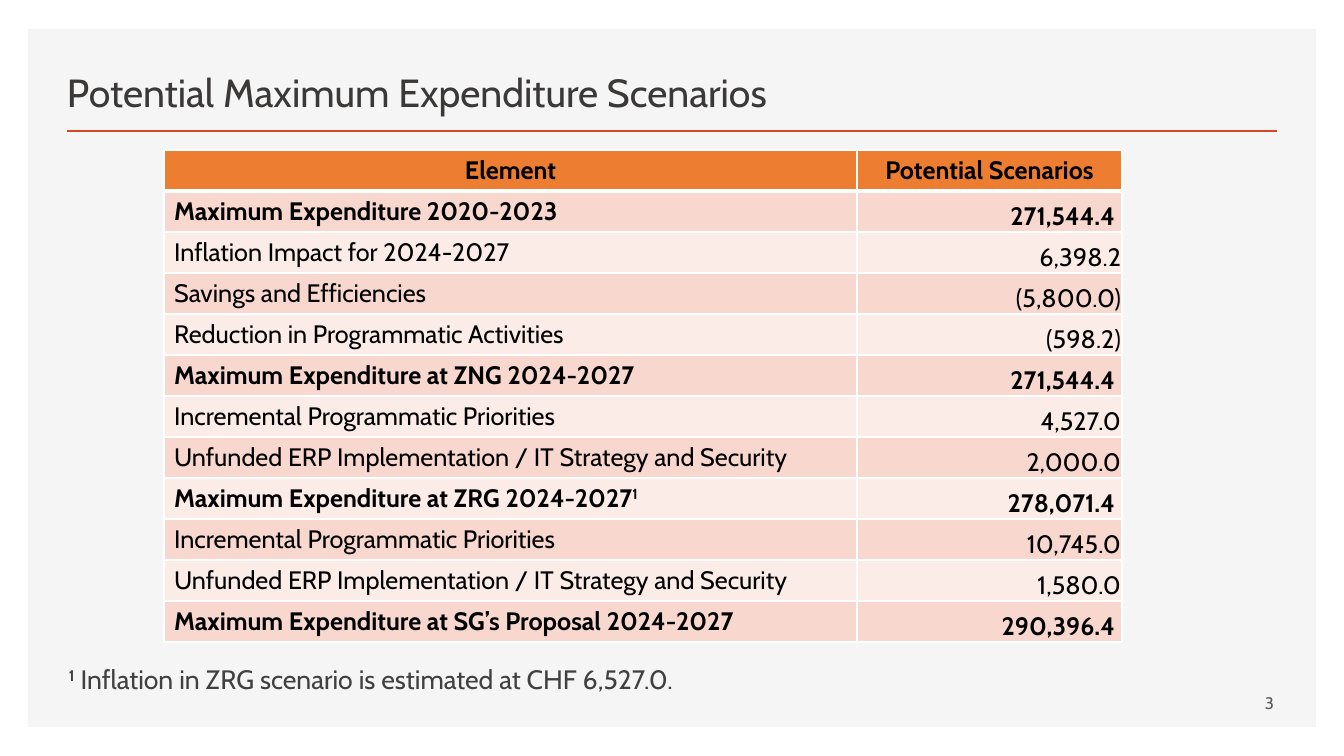
from lxml import etree
from pptx import Presentation
from pptx.dml.color import RGBColor
from pptx.enum.shapes import MSO_CONNECTOR, MSO_SHAPE
from pptx.enum.text import MSO_ANCHOR, PP_ALIGN
from pptx.oxml import parse_xml
from pptx.oxml.ns import nsdecls, qn
from pptx.util import Pt

EMU_PER_PX = 914400 / 100.8
FONT = "Cabin"
LEFT, CENTER, RIGHT = PP_ALIGN.LEFT, PP_ALIGN.CENTER, PP_ALIGN.RIGHT
TOP, MIDDLE, BOTTOM = MSO_ANCHOR.TOP, MSO_ANCHOR.MIDDLE, MSO_ANCHOR.BOTTOM

HEADINGS = ("Element", "Potential Scenarios")
# element, amount, is a total, footnote mark
SCENARIOS = [
    ("Maximum Expenditure 2020-2023", "271,544.4", True, ""),
    ("Inflation Impact for 2024-2027", "6,398.2", False, ""),
    ("Savings and Efficiencies", "(5,800.0)", False, ""),
    ("Reduction in Programmatic Activities", "(598.2)", False, ""),
    ("Maximum Expenditure at ZNG 2024-2027", "271,544.4", True, ""),
    ("Incremental Programmatic Priorities", "4,527.0", False, ""),
    ("Unfunded ERP Implementation / IT Strategy and Security", "2,000.0", False, ""),
    ("Maximum Expenditure at ZRG 2024-2027", "278,071.4", True, "1"),
    ("Incremental Programmatic Priorities", "10,745.0", False, ""),
    ("Unfunded ERP Implementation / IT Strategy and Security", "1,580.0", False, ""),
    ("Maximum Expenditure at SG’s Proposal 2024-2027", "290,396.4", True, ""),
]


def px(length):
    return round(length * EMU_PER_PX)


def rgb(color):
    return RGBColor.from_string(color)


def style(paragraph, size, color, bold=False, align=LEFT):
    paragraph.alignment = align
    font = paragraph.font
    font.name, font.size, font.bold = FONT, Pt(size), bold
    font.color.rgb = rgb(color)


def add_superscript(paragraph, mark):
    run = paragraph.add_run()
    run.text = mark
    run.font.bold = True
    run._r.get_or_add_rPr().set("baseline", "30000")


def add_text(slide, box, text, size, color, anchor=TOP, align=LEFT, mark=""):
    frame = slide.shapes.add_textbox(*map(px, box)).text_frame
    frame.word_wrap = True
    frame.vertical_anchor = anchor
    paragraph = frame.paragraphs[0]
    style(paragraph, size, color, align=align)
    if mark:
        add_superscript(paragraph, mark)
    paragraph.add_run().text = text
    return paragraph


def add_backdrop(slide, box):
    panel = slide.shapes.add_shape(MSO_SHAPE.RECTANGLE, *map(px, box))
    panel.shadow.inherit = False
    panel.fill.solid()
    panel.fill.fore_color.rgb = rgb("F5F5F5")
    panel.line.fill.background()


def add_header(slide, box):
    """Title with a rule along the bottom of the box."""
    left, top, width, height = box
    add_text(slide, (left - 10, top, 944, 71), "Potential Maximum Expenditure Scenarios",
             28, "3B3838", BOTTOM)
    ends = (left, top + height, left + width, top + height)
    rule = slide.shapes.add_connector(MSO_CONNECTOR.STRAIGHT, *map(px, ends))
    rule.line.color.rgb = rgb("D24726")
    rule.line.width = Pt(2)
    etree.SubElement(rule._element.spPr, qn("a:effectLst"))


def paint_cell(cell, fill, top_pt, bottom_pt):
    """White borders first, then the fill, as the schema orders them."""
    properties = cell._tc.get_or_add_tcPr()
    for side, points in (("L", 1), ("R", 1), ("T", top_pt), ("B", bottom_pt)):
        properties.append(parse_xml(
            f'<a:ln{side} {nsdecls("a")} w="{Pt(points)}"><a:solidFill>'
            f'<a:srgbClr val="FFFFFF"/></a:solidFill></a:ln{side}>'))
    cell.fill.solid()
    cell.fill.fore_color.rgb = rgb(fill)


def fill_cell(cell, text, bold, align, anchor):
    cell.vertical_anchor = anchor
    paragraph = cell.text_frame.paragraphs[0]
    style(paragraph, 18, "000000", bold, align)
    paragraph.add_run().text = text
    return paragraph


def add_scenario_table(slide, box):
    left, top, width, height = box
    row_count = len(SCENARIOS) + 1
    table = slide.shapes.add_table(row_count, 2, *map(px, box)).table
    amount_width = 265
    table.columns[0].width = px(width - amount_width)
    table.columns[1].width = px(amount_width)
    for row in table.rows:
        row.height = px(height // row_count)

    for column, heading in enumerate(HEADINGS):
        cell = table.cell(0, column)
        paint_cell(cell, "ED7D31", 1, 3)
        fill_cell(cell, heading, True, CENTER, MIDDLE)

    for row, (element, amount, is_total, mark) in enumerate(SCENARIOS, start=1):
        element_cell, amount_cell = table.cell(row, 0), table.cell(row, 1)
        for cell in (element_cell, amount_cell):
            paint_cell(cell, "F8D7CE" if row % 2 else "FCECE8", 3 if row == 1 else 1, 1)
        label = fill_cell(element_cell, element, is_total, LEFT, TOP)
        if mark:
            add_superscript(label, mark)
        fill_cell(amount_cell, amount, is_total, RIGHT, BOTTOM)
        amount_cell.margin_left = amount_cell.margin_top = px(1)
        amount_cell.margin_right = px(7 if is_total else 1)
        amount_cell.margin_bottom = 0


def add_footer(slide, box):
    left, top, width, height = box
    add_text(slide, (left + 864, top + 25, 361, 40), "3", 12, "595959", MIDDLE, RIGHT)
    footnote = add_text(slide, box, " Inflation in ZRG scenario is estimated at CHF 6,527.0.",
                        19, "404040", mark="1")
    footnote.space_before = Pt(10)


def main():
    deck = Presentation()
    deck.slide_width, deck.slide_height = px(1344), px(756)
    slide = deck.slides.add_slide(deck.slide_layouts[6])
    add_backdrop(slide, (28, 29, 1288, 698))
    add_header(slide, (67, 49, 1210, 82))
    add_scenario_table(slide, (164, 150, 958, 492))
    add_footer(slide, (59, 658, 1250, 70))
    deck.save("out.pptx")


if __name__ == "__main__":
    main()
